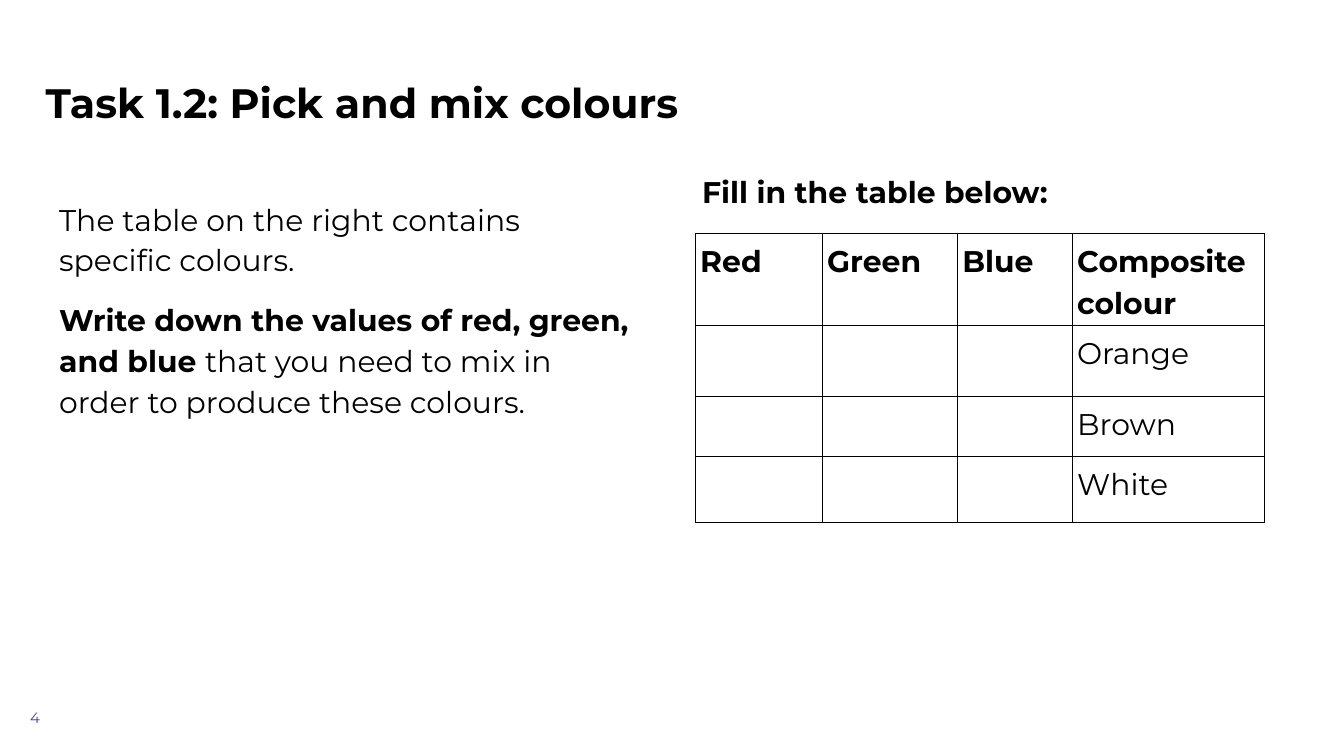
from pptx import Presentation
from pptx.dml.color import RGBColor
from pptx.enum.text import MSO_ANCHOR as Anchor, PP_ALIGN as Align
from pptx.oxml import parse_xml
from pptx.oxml.ns import nsdecls
from pptx.util import Inches, Pt

BLACK = "000000"


def write(para, text, size=32, bold=False, color=BLACK, align=Align.LEFT, line=1.15):
    """Add a formatted span of text to a paragraph."""
    para.alignment = align
    para.line_spacing = line
    span = para.add_run()
    span.text = text
    span.font.name = "Montserrat"
    span.font.size = Pt(size)
    span.font.bold = bold
    span.font.color.rgb = RGBColor.from_string(color)


def prepare(box, left, top, width, height, insets=(0, 0, 0, 0), anchor=Anchor.TOP):
    """Place a text shape and return its first paragraph."""
    box.left, box.top, box.width, box.height = map(Inches, (left, top, width, height))
    frame = box.text_frame
    frame.word_wrap = True
    frame.vertical_anchor = anchor
    (frame.margin_left, frame.margin_top,
     frame.margin_right, frame.margin_bottom) = map(Inches, insets)
    return frame.paragraphs[0]


deck = Presentation()
deck.slide_width, deck.slide_height = Inches(20), Inches(11.25)
page = deck.slides.add_slide(deck.slide_layouts[5])

# Title
para = prepare(page.shapes.title, 0.68, 0.7, 18.64, 1.53, anchor=Anchor.MIDDLE)
write(para, "Task 1.2: Pick and mix colours", size=44, bold=True)

# Instructions
instructions = page.shapes.add_textbox(0, 0, 0, 0)
para = prepare(instructions, 0.68, 2.72, 8.96, 2.44, insets=(0.2, 0.2, 0.12, 0.2))
write(para, "The table on the right contains specific colours.", line=1.14)
para = instructions.text_frame.add_paragraph()
para.space_before = Pt(20)
write(para, "Write down the values of red, green, and blue ", bold=True, line=1.14)
write(para, "that you need to mix in order to produce these colours.", line=1.14)

# Page number
number = page.shapes.add_textbox(0, 0, 0, 0)
write(prepare(number, 0.45, 10.54, 0.68, 0.69), "4", size=16, color="494985", line=1.0)

# Colour table
headings = ["Red", "Green", "Blue", "Composite colour"]
colours = ["Orange", "Brown", "White"]
rows = [headings] + [["", "", "", colour] for colour in colours]
widths = [1.89, 2.01, 1.71, 2.85]
heights = [1.37, 1.06, 0.89, 0.99]

table = page.shapes.add_table(
    len(rows), len(widths), Inches(10.35), Inches(3.47),
    Inches(sum(widths)), Inches(sum(heights))).table
table.first_row = True
table.horz_banding = False
for column, width in zip(table.columns, widths):
    column.width = Inches(width)
for row, height in zip(table.rows, heights):
    row.height = Inches(height)

for r, texts in enumerate(rows):
    for c, text in enumerate(texts):
        cell = table.cell(r, c)
        cell.margin_left = cell.margin_right = Inches(0.07)
        cell.margin_top = cell.margin_bottom = Inches(0.07)
        if text:
            write(cell.text_frame.paragraphs[0], text, bold=r == 0, align=Align.JUSTIFY)
        # Borders come before the fill in the cell properties
        properties = cell._tc.get_or_add_tcPr()
        for side in ("L", "R", "T", "B"):
            properties.append(parse_xml(
                f'<a:ln{side} {nsdecls("a")} w="{Pt(0.75)}"><a:solidFill>'
                f'<a:srgbClr val="{BLACK}"/></a:solidFill></a:ln{side}>'))
        cell.fill.background()

# Table caption
caption = page.shapes.add_textbox(0, 0, 0, 0)
para = prepare(caption, 10.35, 2.41, 8.23, 0.69, insets=(0.1, 0.1, 0.1, 0.1))
write(para, "Fill in the table below:", bold=True)

deck.save("out.pptx")
